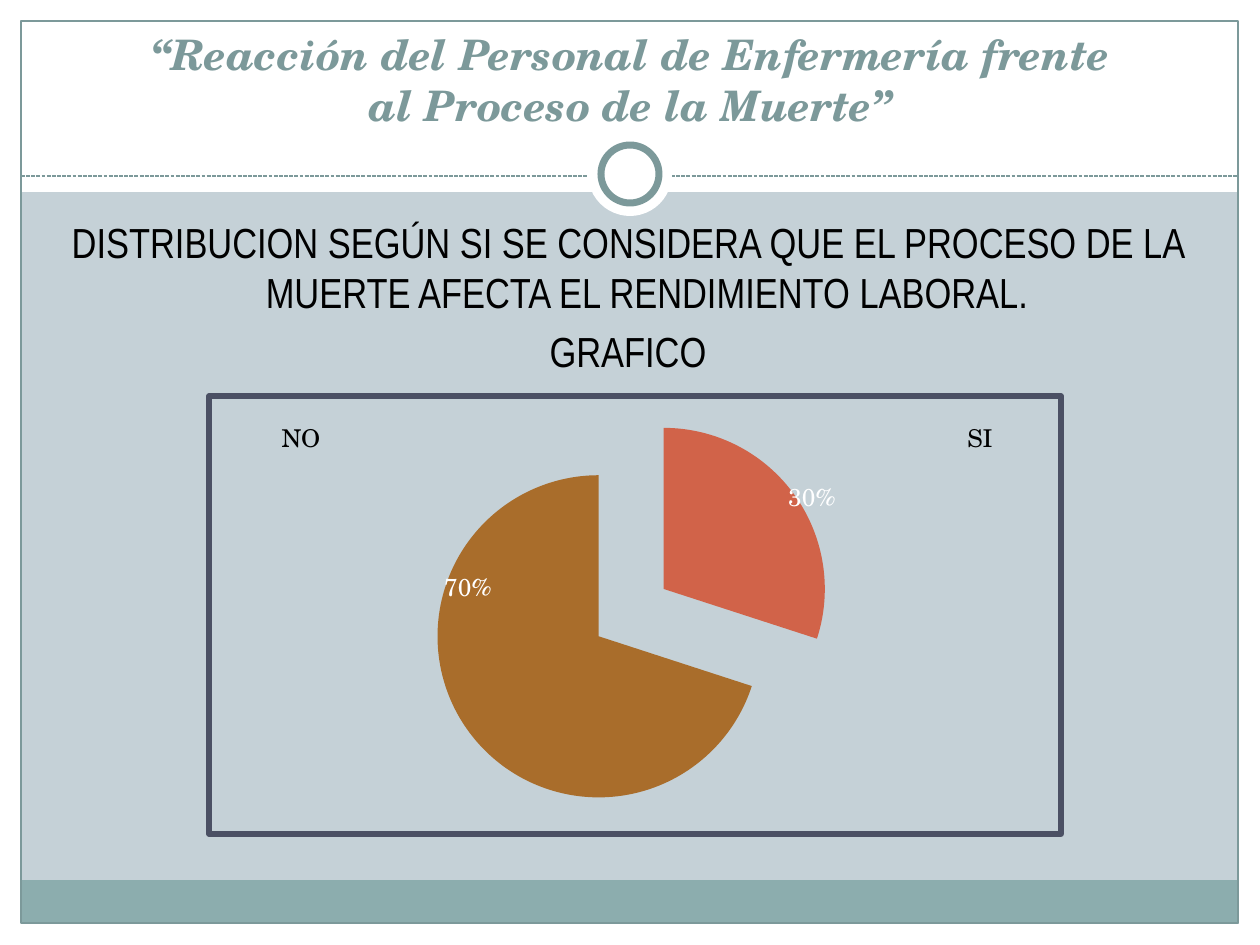
import pptx
import pptx.util
import pptx.dml.color
import pptx.chart.data
import pptx.enum.chart
import pptx.enum.dml
import pptx.enum.shapes
import pptx.enum.text
import pptx.oxml
import lxml.etree

SCHOLA = "TeX Gyre Schola"
TEAL = "7C999A"
KIND = pptx.enum.shapes.MSO_SHAPE
ANCHOR = pptx.enum.text.MSO_ANCHOR


def px(*nums):
    return [round(n * 914400 / 126) for n in nums]


def color(code):
    return pptx.dml.color.RGBColor.from_string(code)


def write(frame, text, font=SCHOLA, size=14, ink="000000", bold=False,
          italic=False, anchor=ANCHOR.MIDDLE, before=0, hang=0):
    frame.word_wrap = True
    frame.auto_size = pptx.enum.text.MSO_AUTO_SIZE.NONE
    frame.vertical_anchor = anchor
    frame.text = text
    for para in frame.paragraphs:
        para.alignment = pptx.enum.text.PP_ALIGN.CENTER
        para.space_before = pptx.util.Pt(before)
        para.font.name = font
        para.font.size = pptx.util.Pt(size)
        para.font.color.rgb = color(ink)
        para.font.bold = bold
        para.font.italic = italic
        if hang:
            props = para._p.get_or_add_pPr()
            props.set("marL", str(px(hang)[0]))
            props.set("indent", str(px(-hang)[0]))


deck = pptx.Presentation()
deck.slide_width, deck.slide_height = px(1260, 945)
slide = deck.slides.add_slide(deck.slide_layouts[5])
shapes = slide.shapes
slide.background.fill.solid()
slide.background.fill.fore_color.rgb = color("C5D1D7")

# White margins, bottom band, frame, dashed rule and ring, back to front
parts = [
    (KIND.RECTANGLE, (0, 924, 1260, 21), "FFFFFF", 0),
    (KIND.RECTANGLE, (0, 0, 1260, 192), "FFFFFF", 0),
    (KIND.RECTANGLE, (0, 0, 21, 945), "FFFFFF", 0),
    (KIND.RECTANGLE, (1239, 0, 21, 945), "FFFFFF", 0),
    (KIND.RECTANGLE, (21, 880, 1217, 43), "8CADAE", 0),
    (KIND.RECTANGLE, (21, 21, 1217, 902), None, 0.75),
    ("rule", (21, 176, 1238, 176), None, 0.75),
    (KIND.OVAL, (588, 132, 84, 84), "FFFFFF", 0),
    (KIND.OVAL, (601, 145, 58, 58), "FFFFFF", 4),
]
for kind, box, fill, width in parts:
    if kind == "rule":
        part = shapes.add_connector(
            pptx.enum.shapes.MSO_CONNECTOR.STRAIGHT, *px(*box))
        part.line.dash_style = pptx.enum.dml.MSO_LINE.SQUARE_DOT
        lxml.etree.SubElement(part._element.spPr,
                              pptx.oxml.ns.qn("a:effectLst"))
    else:
        part = shapes.add_shape(kind, *px(*box))
        part.shadow.inherit = False
        if fill:
            part.fill.solid()
            part.fill.fore_color.rgb = color(fill)
        else:
            part.fill.background()
    if width:
        part.line.color.rgb = color(TEAL)
        part.line.width = pptx.util.Pt(width)
    else:
        part.line.fill.background()

# Title, brought in front of the white margin
title = shapes.title
title.left, title.top, title.width, title.height = px(42, 31, 1176, 105)
write(title.text_frame,
      "“Reacción del Personal de Enfermería frente\val Proceso de la Muerte”",
      size=24, ink=TEAL, bold=True, italic=True, anchor=ANCHOR.BOTTOM)
title.element.getparent().append(title.element)

# Heading of the chart
body = shapes.add_textbox(*px(42, 210, 1172, 180))
write(body.text_frame,
      "DISTRIBUCION SEGÚN SI SE CONSIDERA QUE EL PROCESO DE LA MUERTE "
      "AFECTA EL RENDIMIENTO LABORAL.\nGRAFICO",
      font="Arial Narrow", size=24, anchor=ANCHOR.TOP, before=5, hang=38)

# Exploded pie
data = pptx.chart.data.CategoryChartData()
data.categories = ["1", "2"]
data.add_series("Series 1", (30, 70))
chart = shapes.add_chart(pptx.enum.chart.XL_CHART_TYPE.PIE_EXPLODED,
                         *px(207, 393, 857, 444), data).chart
chart.has_title = False
chart.has_legend = False
chart.font.name = SCHOLA
chart.font.size = pptx.util.Pt(10)
chart.font.color.rgb = color("000000")
plot = chart.plots[0]
plot.vary_by_categories = True
series = plot.series[0]
for n, code in enumerate(("D16349", "A96D2B")):
    fill = series.points[n].format.fill
    fill.solid()
    fill.fore_color.rgb = color(code)
blast = series._element.find(pptx.oxml.ns.qn("c:explosion"))
if blast is not None:
    blast.set("val", "25")

# Plot placement
NS = pptx.oxml.ns.nsdecls("c")
area = chart._chartSpace.chart.plotArea
for old in area.findall(pptx.oxml.ns.qn("c:layout")):
    area.remove(old)
area.insert(0, pptx.oxml.parse_xml(
    f'<c:layout {NS}><c:manualLayout><c:layoutTarget val="inner"/>'
    '<c:xMode val="edge"/><c:yMode val="edge"/><c:x val="0.26"/>'
    '<c:y val="0.04"/><c:w val="0.47"/><c:h val="0.91"/>'
    '</c:manualLayout></c:layout>'))

# Border round the chart
edge = shapes.add_shape(KIND.RECTANGLE, *px(209, 396, 852, 438))
edge.shadow.inherit = False
edge.fill.background()
edge.line.color.rgb = color("4B5064")
edge.line.width = pptx.util.Pt(3)

# Labels
for text, left, top, ink in [("70%", 384, 552, "FFFFFF"),
                             ("30%", 728, 462, "FFFFFF"),
                             ("NO", 217, 403, "000000"),
                             ("SI", 896, 403, "000000")]:
    label = shapes.add_textbox(*px(left, top, 168, 69))
    write(label.text_frame, text, ink=ink)

deck.save("out.pptx")
